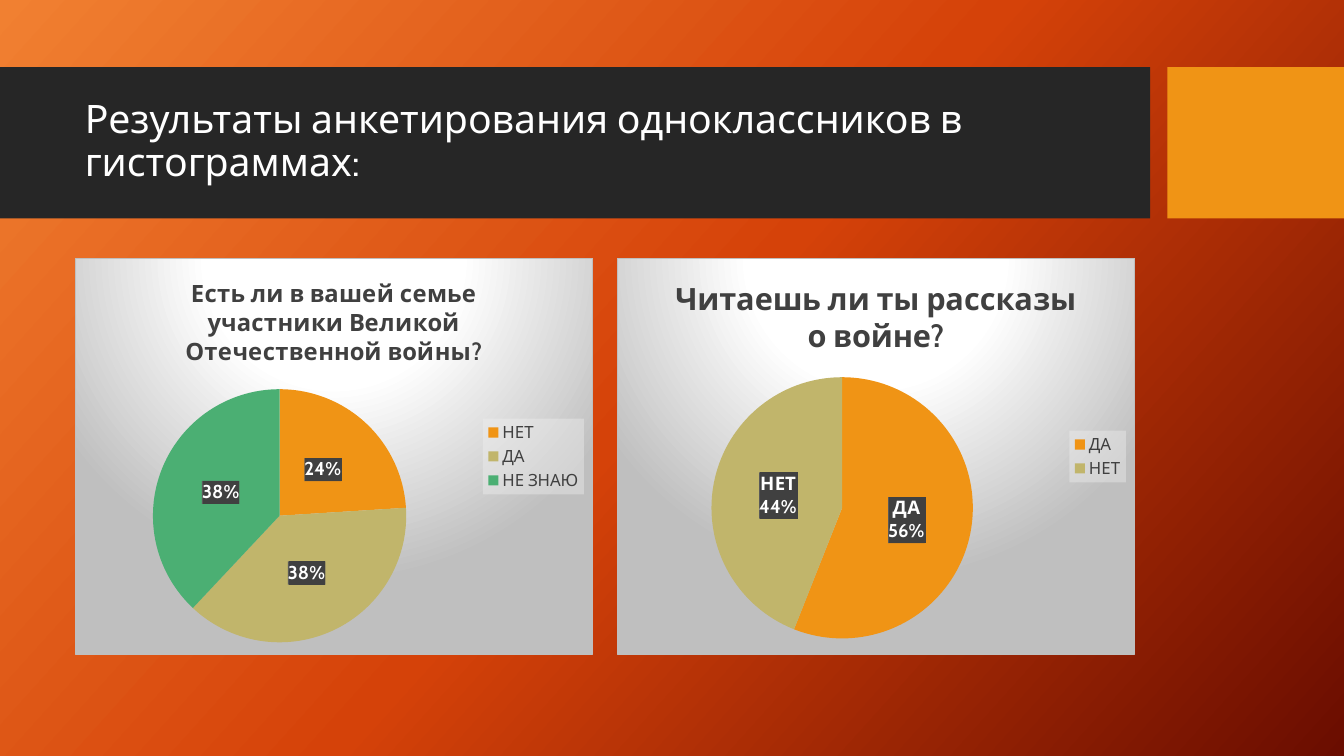
from dataclasses import dataclass

from lxml import etree
from pptx import Presentation
from pptx.chart.data import CategoryChartData
from pptx.dml.color import RGBColor
from pptx.enum.chart import XL_CHART_TYPE, XL_LABEL_POSITION, XL_LEGEND_POSITION
from pptx.enum.shapes import MSO_SHAPE
from pptx.enum.text import MSO_ANCHOR
from pptx.oxml import parse_xml
from pptx.util import Pt

PIE = XL_CHART_TYPE.PIE
LABEL_CENTER = XL_LABEL_POSITION.CENTER
LEGEND_RIGHT = XL_LEGEND_POSITION.RIGHT
RECT = MSO_SHAPE.RECTANGLE
MIDDLE = MSO_ANCHOR.MIDDLE

FONT = "Cabin"
WHITE = RGBColor(0xFF, 0xFF, 0xFF)
DARK = RGBColor(0x26, 0x26, 0x26)
GRAY = RGBColor(0x40, 0x40, 0x40)
SILVER = RGBColor(0xBF, 0xBF, 0xBF)
ORANGE = RGBColor(0xF0, 0x94, 0x15)
KHAKI = RGBColor(0xC1, 0xB5, 0x6B)
GREEN = RGBColor(0x4B, 0xAF, 0x73)
BG_LIGHT = RGBColor(0xF1, 0x80, 0x31)
BG_MID = RGBColor(0xD5, 0x42, 0x09)
BG_DEEP = RGBColor(0x6A, 0x0D, 0x00)
SLICES = (ORANGE, KHAKI, GREEN)

NS_A = "http://schemas.openxmlformats.org/drawingml/2006/main"
NS_C = "http://schemas.openxmlformats.org/drawingml/2006/chart"
NS = f'xmlns:a="{NS_A}" xmlns:c="{NS_C}"'
CHART_TOP, CHART_W, CHART_H = 184.3, 370, 283.5


@dataclass
class Band:
    left: float
    width: float
    color: RGBColor


@dataclass
class Survey:
    left: float
    question: str
    title_size: float
    series: str
    answers: dict[str, int]
    plot: tuple[float, float, float, float]  # x, y, w, h as chart fractions
    show_answer: bool


BANDS = [Band(0, 821.5, DARK), Band(833.8, 126.2, ORANGE)]
SURVEYS = [
    Survey(53.5, "Есть ли в вашей семье участники Великой Отечественной войны?", 17,
           "Series 1", {"НЕТ": 24, "ДА": 38, "НЕ ЗНАЮ": 38},
           (0.15, 0.33, 0.49, 0.64), False),
    Survey(440.6, "Читаешь ли ты рассказы о войне?", 22,
           "Читаешь ли ты рассказы о войне?", {"ДА": 56, "НЕТ": 44},
           (0.18, 0.3, 0.51, 0.66), True),
]


def set_font(font, size: float, color: RGBColor, bold: bool = False) -> None:
    font.name, font.size, font.bold = FONT, Pt(size), bold
    font.color.rgb = color


def add_text(p, text: str, *, size: float, color: RGBColor, bold: bool = False) -> None:
    r = p.add_run()
    r.text = text
    set_font(r.font, size, color, bold)


def gradient(stops: dict[int, RGBColor], direction: str) -> str:
    marks = "".join(f'<a:gs pos="{pos * 1000}"><a:srgbClr val="{color}"/></a:gs>'
                    for pos, color in stops.items())
    return f'<a:gradFill {NS} rotWithShape="1"><a:gsLst>{marks}</a:gsLst>{direction}</a:gradFill>'


def chart_format(content: str):
    return parse_xml(f"<c:spPr {NS}>{content}</c:spPr>")


def add_band(s, band: Band) -> None:
    sp = s.shapes.add_shape(RECT, Pt(band.left), Pt(48), Pt(band.width), Pt(108))
    sp.shadow.inherit = False
    sp.fill.solid()
    sp.fill.fore_color.rgb = band.color
    sp.line.fill.background()


def add_survey(s, survey: Survey) -> None:
    data = CategoryChartData()
    data.categories = list(survey.answers)
    data.add_series(survey.series, list(survey.answers.values()))
    chart = s.shapes.add_chart(PIE, Pt(survey.left), Pt(CHART_TOP),
                               Pt(CHART_W), Pt(CHART_H), data).chart
    set_font(chart.font, 10, WHITE)

    # Title and legend
    chart.has_title = True
    add_text(chart.chart_title.text_frame.paragraphs[0], survey.question,
             size=survey.title_size, color=GRAY, bold=True)
    chart.chart_title.include_in_layout = False
    chart.has_legend = True
    legend = chart.legend
    legend.position = LEGEND_RIGHT
    legend.include_in_layout = False
    set_font(legend.font, 12, GRAY)
    legend._element.xpath("c:txPr")[0].addprevious(chart_format(
        '<a:solidFill><a:srgbClr val="F2F2F2"><a:alpha val="39000"/></a:srgbClr></a:solidFill>'))

    # Slices
    plot = chart.plots[0]
    plot.vary_by_categories = True
    for i in range(len(survey.answers)):
        fill = plot.series[0].points[i].format.fill
        fill.solid()
        fill.fore_color.rgb = SLICES[i]

    # Percent labels on dark striped plates
    labels = plot.series[0].data_labels
    labels.show_percentage = True
    labels.show_value = False
    labels.show_category_name = survey.show_answer
    labels.number_format, labels.number_format_is_linked = "0%", False
    labels.position = LABEL_CENTER
    set_font(labels.font, 13.3, WHITE, bold=True)
    d_lbls = labels._element
    d_lbls.xpath("c:txPr")[0].addprevious(chart_format(
        '<a:pattFill prst="dkVert"><a:fgClr><a:srgbClr val="404040"/></a:fgClr>'
        '<a:bgClr><a:srgbClr val="595959"/></a:bgClr></a:pattFill>'))
    if survey.show_answer:
        separator = etree.Element(f"{{{NS_C}}}separator")
        separator.text = "\n"
        anchor = d_lbls.xpath("c:showBubbleSize|c:showPercent")[-1]
        anchor.addnext(separator)

    # Plot position
    area = chart._chartSpace.xpath("c:chart/c:plotArea")[0]
    for old in area.xpath("c:layout"):
        area.remove(old)
    spots = "".join(f'<c:{tag} val="{val}"/>' for tag, val in zip("xywh", survey.plot))
    area.insert(0, parse_xml(
        f'<c:layout {NS}><c:manualLayout><c:layoutTarget val="inner"/>'
        f'<c:xMode val="edge"/><c:yMode val="edge"/>{spots}</c:manualLayout></c:layout>'))

    # Chart background and border
    glow = gradient({0: WHITE, 39: WHITE, 100: SILVER},
                    '<a:path path="circle"><a:fillToRect l="50000" t="-80000" '
                    'r="50000" b="180000"/></a:path>')
    border = (f'<a:ln w="{Pt(0.75)}"><a:solidFill><a:srgbClr val="{SILVER}"/>'
              '</a:solidFill></a:ln>')
    chart._chartSpace.xpath("c:chart")[0].addnext(chart_format(glow + border))


def main() -> None:
    prs = Presentation()
    prs.slide_width, prs.slide_height = Pt(960), Pt(540)
    s = prs.slides.add_slide(prs.slide_layouts[6])

    # Background
    s.background.fill.solid()
    bg = s._element.xpath("p:cSld/p:bg/p:bgPr")[0]
    bg.replace(bg[0], parse_xml(gradient({0: BG_LIGHT, 50: BG_MID, 100: BG_DEEP},
                                         f'<a:lin ang="{42 * 60000}" scaled="0"/>')))

    # Heading
    for band in BANDS:
        add_band(s, band)
    tf = s.shapes.add_textbox(Pt(53.5), Pt(59), Pt(756.5), Pt(85)).text_frame
    tf.word_wrap = True
    tf.vertical_anchor = MIDDLE
    p = tf.paragraphs[0]
    p.line_spacing = 0.9
    add_text(p, "Результаты анкетирования одноклассников в гистограммах:",
             size=28, color=WHITE)

    # Charts
    for survey in SURVEYS:
        add_survey(s, survey)

    prs.save("out.pptx")


if __name__ == "__main__":
    main()
